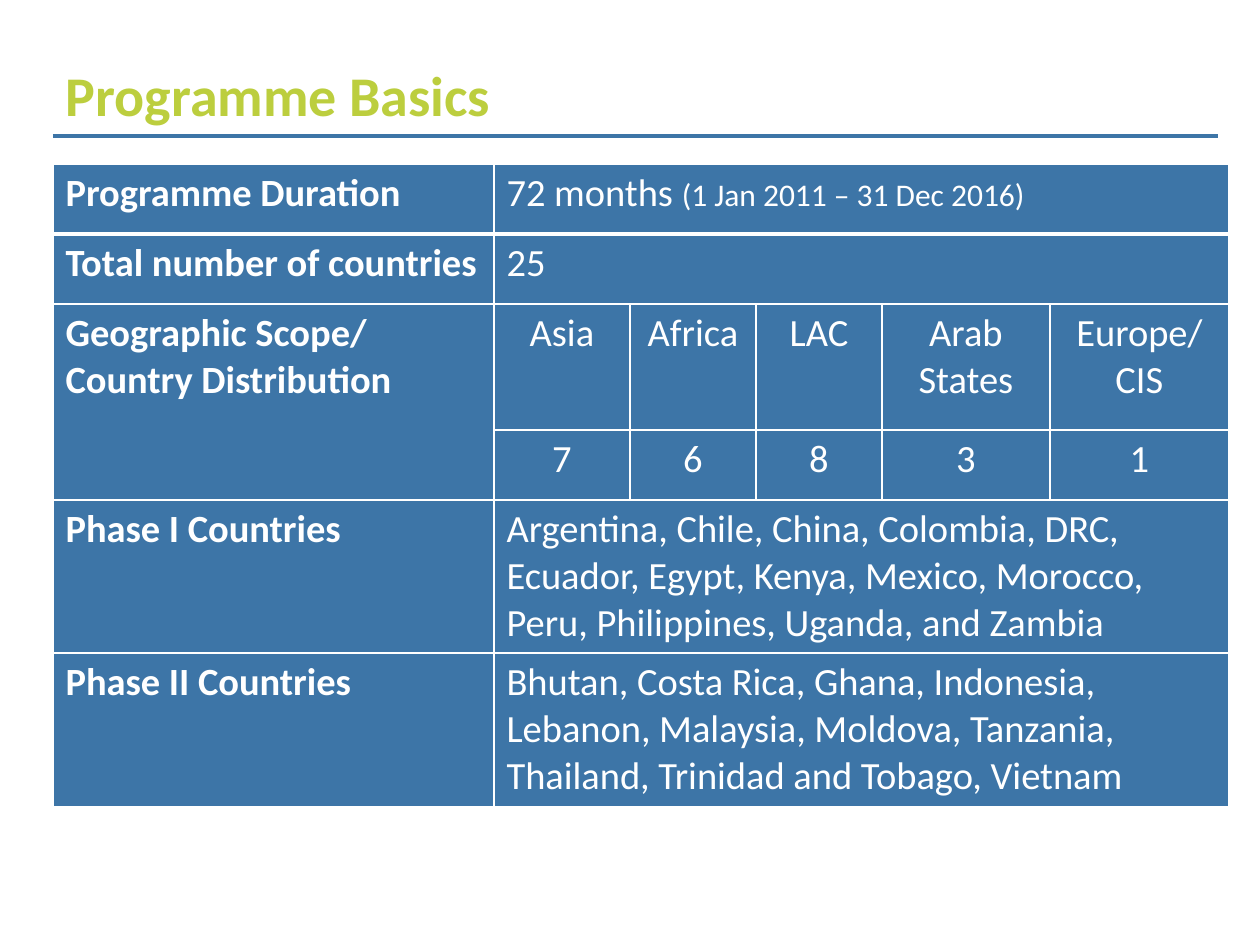
from lxml import etree
from pptx import Presentation
from pptx.dml.color import RGBColor
from pptx.enum.shapes import MSO_CONNECTOR
from pptx.enum.text import MSO_ANCHOR, PP_ALIGN
from pptx.oxml.ns import qn
from pptx.util import Emu, Pt

STRAIGHT = MSO_CONNECTOR.STRAIGHT
TOP = MSO_ANCHOR.TOP
LEFT, CENTER = PP_ALIGN.LEFT, PP_ALIGN.CENTER
BLUE = RGBColor(0x3D, 0x75, 0xA7)
LIME = RGBColor(0xBC, 0xCE, 0x3E)
WHITE = RGBColor(0xFF, 0xFF, 0xFF)
FONT = "Calibri"
TITLE_ONLY = 5
EMU_PER_PX = 914400 / 126

COLUMN_WIDTHS = [441, 136, 126, 126, 168, 179]
ROW_HEIGHTS = [70, 70, 126, 70, 151, 151]
HEADINGS = {
    0: "Programme Duration",
    1: "Total number of countries",
    2: "Geographic Scope/ Country Distribution",
    4: "Phase I Countries",
    5: "Phase II Countries",
}
DETAILS = {
    0: [("72 months ", 22), ("(1 Jan 2011 – 31 Dec 2016)", 18)],
    1: [("25", 22)],
    4: [("Argentina, Chile, China, Colombia, DRC, Ecuador, Egypt, Kenya, "
         "Mexico, Morocco, Peru, Philippines, Uganda, and Zambia", 22)],
    5: [("Bhutan, Costa Rica, Ghana, Indonesia, Lebanon, Malaysia, Moldova, "
         "Tanzania, Thailand, Trinidad and Tobago, Vietnam", 22)],
}
REGIONS = [(["Asia"], 7), (["Africa"], 6), (["LAC"], 8),
           (["Arab States"], 3), (["Europe/", "CIS"], 1)]


def px(length):
    """Turn whole pixels into EMU."""
    return Emu(round(length * EMU_PER_PX))


def add_run(paragraph, text, size, color, bold=False):
    """Append one formatted run to a paragraph."""
    run = paragraph.add_run()
    run.text = text
    run.font.name = FONT
    run.font.size = Pt(size)
    run.font.bold = bold
    run.font.color.rgb = color


def add_title(slide, text):
    """Place and format the slide title."""
    title = slide.shapes.title
    title.left, title.top, title.width, title.height = map(px, (53, 54, 756, 81))
    title.text_frame.vertical_anchor = TOP
    paragraph = title.text_frame.paragraphs[0]
    paragraph.alignment = LEFT
    add_run(paragraph, text, 32, LIME, bold=True)


def add_rule(slide, left, right, y):
    """Draw the horizontal rule under the title."""
    rule = slide.shapes.add_connector(STRAIGHT, px(left), px(y), px(right), px(y))
    rule.line.color.rgb = BLUE
    rule.line.width = Pt(2)
    etree.SubElement(rule._element.spPr, qn("a:effectLst"))


def style_cell(cell, top_width, bottom_width):
    """Give a cell white borders and a blue fill."""
    properties = cell._tc.get_or_add_tcPr()
    widths = {"lnL": 1, "lnR": 1, "lnT": top_width, "lnB": bottom_width}
    for side, width in widths.items():
        border = etree.SubElement(properties, qn(f"a:{side}"), w=str(Pt(width)))
        fill = etree.SubElement(border, qn("a:solidFill"))
        etree.SubElement(fill, qn("a:srgbClr"), val=str(WHITE))
    cell.fill.solid()
    cell.fill.fore_color.rgb = BLUE


def fill_cell(cell, lines, alignment=LEFT, bold=False):
    """Write lines of (text, size) runs into a cell."""
    frame = cell.text_frame
    for index, runs in enumerate(lines):
        paragraph = frame.add_paragraph() if index else frame.paragraphs[0]
        paragraph.alignment = alignment
        for text, size in runs:
            add_run(paragraph, text, size, WHITE, bold)


def add_grid(slide, left, top):
    """Add the styled empty table with its column widths and row heights."""
    frame = slide.shapes.add_table(
        len(ROW_HEIGHTS), len(COLUMN_WIDTHS), px(left), px(top),
        px(sum(COLUMN_WIDTHS)), px(sum(ROW_HEIGHTS)))
    table = frame.table
    table.first_row = table.horz_banding = False
    for column, width in zip(table.columns, COLUMN_WIDTHS):
        column.width = px(width)
    for index, (row, height) in enumerate(zip(table.rows, ROW_HEIGHTS)):
        row.height = px(height)
        for cell in row.cells:
            style_cell(cell, 3 if index == 1 else 1, 3 if index == 0 else 1)
    return table


def add_programme_table(slide):
    """Add the table of programme facts."""
    table = add_grid(slide, 53, 164)
    for row, heading in HEADINGS.items():
        fill_cell(table.cell(row, 0), [[(heading, 22)]], bold=True)
    for row, runs in DETAILS.items():
        table.cell(row, 1).merge(table.cell(row, len(COLUMN_WIDTHS) - 1))
        fill_cell(table.cell(row, 1), [runs])
    table.cell(2, 0).merge(table.cell(3, 0))
    for column, (names, count) in enumerate(REGIONS, start=1):
        fill_cell(table.cell(2, column), [[(name, 22)] for name in names], CENTER)
        fill_cell(table.cell(3, column), [[(str(count), 22)]], CENTER)


def main():
    """Build and save the presentation."""
    presentation = Presentation()
    presentation.slide_width, presentation.slide_height = px(1260), px(945)
    slide = presentation.slides.add_slide(presentation.slide_layouts[TITLE_ONLY])
    add_title(slide, "Programme Basics")
    add_rule(slide, 53, 1218, 136)
    add_programme_table(slide)
    presentation.save("out.pptx")


if __name__ == "__main__":
    main()
